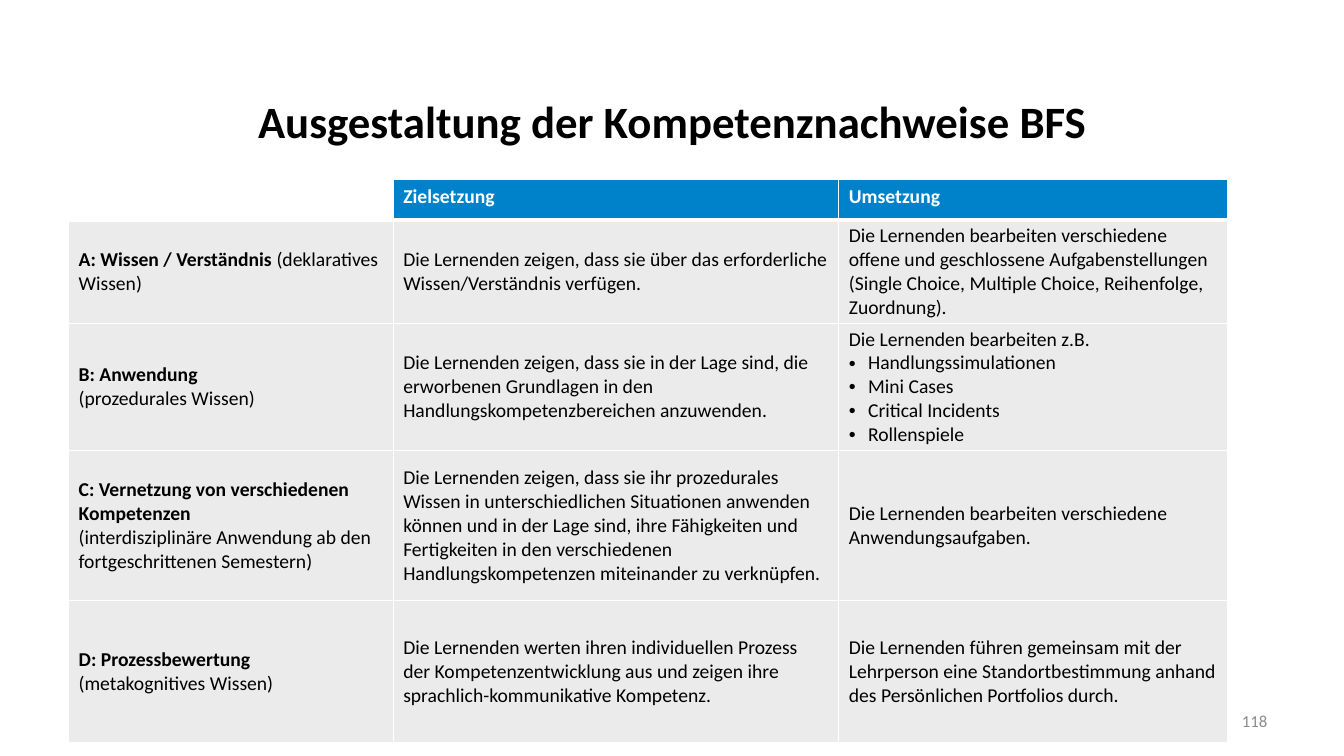
import pptx
import pptx.dml.color
import pptx.enum.text
import pptx.oxml
import pptx.oxml.ns
import pptx.util
from lxml import etree

PX = 9144  # EMU per px, 100 px to the inch
RGBColor = pptx.dml.color.RGBColor
BLACK = RGBColor(0x00, 0x00, 0x00)
WHITE = RGBColor(0xFF, 0xFF, 0xFF)
GREY = RGBColor(0x8C, 0x8C, 0x8C)
BLUE = RGBColor(0x00, 0x82, 0xCA)
LIGHT = RGBColor(0xEB, 0xEB, 0xEB)
FONT = "Calibri"
MIDDLE = pptx.enum.text.MSO_ANCHOR.MIDDLE
ALIGN = pptx.enum.text.PP_ALIGN

COLUMNS = [322, 442, 386]
ROWS = [38, 103, 126, 149, 141]
HEADER = ["", "Zielsetzung", "Umsetzung"]
# Each cell is a list of paragraphs, each paragraph a list of runs;
# "**" marks a bold run, "•" a bulleted paragraph.
BODY = [
    [[["**A: Wissen / Verständnis ", "(deklaratives Wissen)"]],
     [["Die Lernenden zeigen, dass sie über das erforderliche "
       "Wissen/Verständnis verfügen."]],
     [["Die Lernenden bearbeiten verschiedene offene und geschlossene "
       "Aufgabenstellungen (Single Choice, Multiple Choice, Reihenfolge, "
       "Zuordnung)."]]],
    [[["**B: Anwendung"], ["(prozedurales Wissen)"]],
     [["Die Lernenden zeigen, dass sie in der Lage sind, die erworbenen "
       "Grundlagen in den Handlungskompetenzbereichen anzuwenden."]],
     [["Die Lernenden bearbeiten z.B."], ["•Handlungssimulationen"],
      ["•Mini Cases"], ["•Critical Incidents"], ["•Rollenspiele"]]],
    [[["**C: Vernetzung von verschiedenen Kompetenzen"],
      ["(interdisziplinäre Anwendung ab den fortgeschrittenen Semestern)"]],
     [["Die Lernenden zeigen, dass sie ihr prozedurales Wissen in "
       "unterschiedlichen Situationen anwenden können und in der Lage sind, "
       "ihre Fähigkeiten und Fertigkeiten in den verschiedenen "
       "Handlungskompetenzen miteinander zu verknüpfen."]],
     [["Die Lernenden bearbeiten verschiedene Anwendungsaufgaben."]]],
    [[["**D: Prozessbewertung"], ["(metakognitives Wissen)"]],
     [["Die Lernenden werten ihren individuellen Prozess der "
       "Kompetenzentwicklung aus und zeigen ihre sprachlich-kommunikative "
       "Kompetenz."]],
     [["Die Lernenden führen gemeinsam mit der Lehrperson eine "
       "Standortbestimmung anhand des Persönlichen Portfolios durch."]]],
]


def px(n):
    return pptx.util.Emu(n * PX)


def add_run(p, text, size, color, bold=False):
    r = p.add_run()
    r.text = text
    r.font.name = FONT
    r.font.size = pptx.util.Pt(size)
    r.font.bold = bold
    r.font.color.rgb = color


def add_bullet(p):
    pPr = p._p.get_or_add_pPr()
    pPr.set("marL", str(px(19)))
    pPr.set("indent", str(px(-19)))
    etree.SubElement(pPr, pptx.oxml.ns.qn("a:buFont")).set("typeface", "Arial")
    etree.SubElement(pPr, pptx.oxml.ns.qn("a:buChar")).set("char", "•")


def set_borders(cell, **widths):
    """Draw white borders; widths in points are given by side (L, R, T, B)."""
    tcPr = cell._tc.get_or_add_tcPr()
    for i, side in enumerate("LRTB"):
        width = pptx.util.Pt(widths.get(side, 1))
        tcPr.insert(i, pptx.oxml.parse_xml(
            f'<a:ln{side} {pptx.oxml.ns.nsdecls("a")} w="{width}"><a:solidFill>'
            f'<a:srgbClr val="{WHITE}"/></a:solidFill></a:ln{side}>'))


def add_title(s, x, y, w, h):
    title = s.shapes.title
    title.left, title.top, title.width, title.height = map(px, (x, y, w, h))
    tf = title.text_frame
    tf.vertical_anchor = MIDDLE
    p = tf.paragraphs[0]
    p.alignment = ALIGN.CENTER
    add_run(p, "Ausgestaltung der Kompetenznachweise BFS", 32, BLACK, True)


def add_page_number(s, x, y, w, h):
    tf = s.shapes.add_textbox(*map(px, (x, y, w, h))).text_frame
    tf.word_wrap = True
    tf.vertical_anchor = MIDDLE
    p = tf.paragraphs[0]
    p.alignment = ALIGN.RIGHT
    add_run(p, "118", 12, GREY)


def fill_header_cell(cell, text):
    if text:
        cell.fill.solid()
        cell.fill.fore_color.rgb = BLUE
        add_run(cell.text_frame.paragraphs[0], text, 14, WHITE, True)
    else:
        cell.fill.background()
    set_borders(cell, B=3)


def fill_body_cell(cell, paragraphs, top_border):
    cell.fill.solid()
    cell.fill.fore_color.rgb = LIGHT
    cell.vertical_anchor = MIDDLE
    cell.margin_top = cell.margin_bottom = px(3)
    tf = cell.text_frame
    for i, runs in enumerate(paragraphs):
        p = tf.add_paragraph() if i else tf.paragraphs[0]
        if runs[0].startswith("•"):
            add_bullet(p)
        for text in runs:
            add_run(p, text.lstrip("*•"), 14, BLACK, text.startswith("**"))
    set_borders(cell, T=top_border)


def add_competence_table(s, x, y):
    table = s.shapes.add_table(
        len(ROWS), len(COLUMNS),
        *map(px, (x, y, sum(COLUMNS), sum(ROWS)))).table
    table.horz_banding = False
    for column, width in zip(table.columns, COLUMNS):
        column.width = px(width)
    for row, height in zip(table.rows, ROWS):
        row.height = px(height)
    for c, text in enumerate(HEADER):
        fill_header_cell(table.cell(0, c), text)
    for r, row in enumerate(BODY, 1):
        for c, paragraphs in enumerate(row):
            fill_body_cell(table.cell(r, c), paragraphs, 3 if r == 1 else 1)


def main():
    prs = pptx.Presentation()
    prs.slide_width, prs.slide_height = px(1333), px(750)
    s = prs.slides.add_slide(prs.slide_layouts[5])
    add_title(s, 67, 84, 1200, 71)
    add_page_number(s, 956, 695, 311, 40)
    add_competence_table(s, 68, 178)
    prs.save("out.pptx")


if __name__ == "__main__":
    main()
